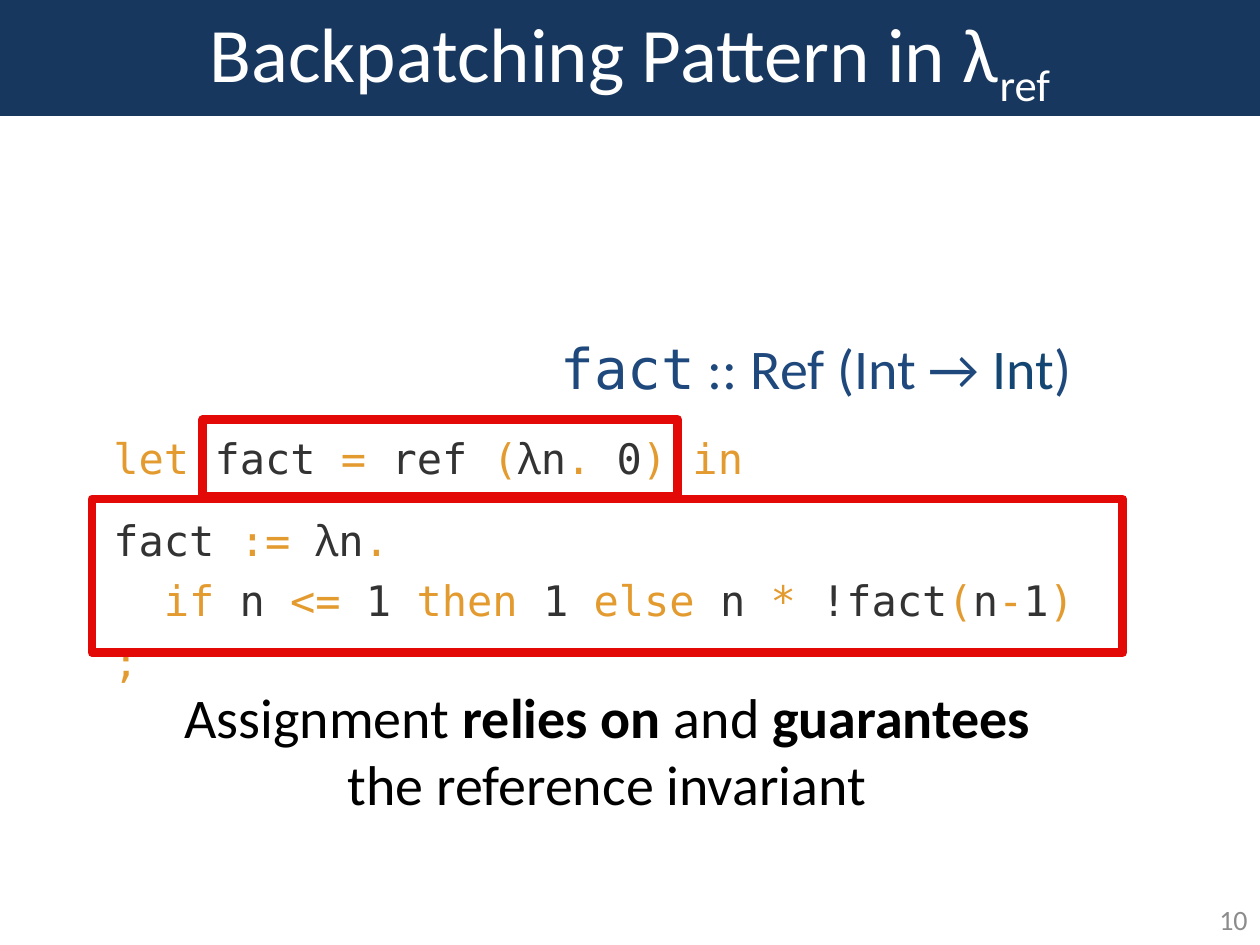
from dataclasses import dataclass, field

from lxml.etree import SubElement
from pptx import Presentation
from pptx.dml.color import RGBColor
from pptx.enum.shapes import MSO_SHAPE as Shape
from pptx.enum.text import MSO_ANCHOR as Anchor, MSO_AUTO_SIZE as AutoSize, PP_ALIGN as Align
from pptx.oxml.ns import qn
from pptx.util import Inches, Pt

# The slide is a grid of 100 columns by 75 rows.
SLIDE_WIDTH, SLIDE_HEIGHT = Inches(10), Inches(7.5)
COLUMN, ROW = SLIDE_WIDTH / 100, SLIDE_HEIGHT / 75

NAVY = RGBColor(0x17, 0x37, 0x5E)
BLUE = RGBColor(0x1F, 0x49, 0x7D)
TEAL = RGBColor(0x14, 0x46, 0x73)
RED = RGBColor(0xE3, 0x09, 0x07)
ORANGE = RGBColor(0xE3, 0x9B, 0x30)
CHARCOAL = RGBColor(0x33, 0x33, 0x33)
GRAY = RGBColor(0x8C, 0x8C, 0x8C)
BLACK = RGBColor(0, 0, 0)
WHITE = RGBColor(0xFF, 0xFF, 0xFF)

SANS, MONO, GREEK = "Calibri", "DejaVu Sans Mono", "Noto Sans"
CODE_SIZE = 24
CODE_INDENT = Pt(2 * 0.6 * CODE_SIZE)  # two monospaced characters


@dataclass
class Box:
    """A place on the grid, in columns and rows."""
    left: float
    top: float
    width: float
    height: float

    def lengths(self) -> list[int]:
        return [round(self.left * COLUMN), round(self.top * ROW),
                round(self.width * COLUMN), round(self.height * ROW)]


@dataclass
class Run:
    text: str
    color: RGBColor
    size: float
    font: str = SANS
    bold: bool = False
    baseline: int = 0


@dataclass
class Line:
    """A paragraph; each "\\n" run is a line break."""
    runs: list[Run]
    align: Align = Align.LEFT
    space_after: float = 0
    indent: int = 0


@dataclass
class TextBlock:
    box: Box
    lines: list[Line]
    frame: dict = field(default_factory=dict)


def keyword(text: str) -> Run:
    return Run(text, ORANGE, CODE_SIZE, MONO)


def plain(text: str) -> Run:
    return Run(text, CHARCOAL, CODE_SIZE, MONO)


def write_lines(text_frame, lines: list[Line]) -> None:
    for number, line in enumerate(lines):
        paragraph = text_frame.add_paragraph() if number else text_frame.paragraphs[0]
        paragraph.alignment = line.align
        paragraph.space_after = Pt(line.space_after)
        if line.indent:
            paragraph._p.get_or_add_pPr().set("marL", str(line.indent))
        for part in line.runs:
            if part.text == "\n":
                paragraph.add_line_break()
                continue
            run = paragraph.add_run()
            run.text = part.text
            formats = {"name": part.font, "size": Pt(part.size), "bold": part.bold}
            for name, value in formats.items():
                setattr(run.font, name, value)
            run.font.color.rgb = part.color
            if part.baseline:
                run._r.get_or_add_rPr().set("baseline", str(part.baseline * 1000))


def fill_frame(text_frame, block: TextBlock) -> None:
    formats = {"word_wrap": True, "vertical_anchor": Anchor.MIDDLE} | block.frame
    for name, value in formats.items():
        setattr(text_frame, name, value)
    write_lines(text_frame, block.lines)


def add_text(slide, block: TextBlock) -> None:
    fill_frame(slide.shapes.add_textbox(*block.box.lengths()).text_frame, block)


def add_title_bar(slide, block: TextBlock) -> None:
    bar = slide.shapes.add_shape(Shape.RECTANGLE, *block.box.lengths())
    bar.shadow.inherit = False
    bar.fill.solid()
    bar.fill.fore_color.rgb = NAVY
    bar.line.fill.background()
    fill_frame(bar.text_frame, block)


def add_highlight(slide, box: Box) -> None:
    """Draw a red outline with rounded corner joins."""
    outline = slide.shapes.add_shape(Shape.RECTANGLE, *box.lengths())
    outline.shadow.inherit = False
    outline.fill.background()
    outline.line.color.rgb = RED
    outline.line.width = Pt(5)
    SubElement(outline.line._get_or_add_ln(), qn("a:round"))


GROW = {"auto_size": AutoSize.SHAPE_TO_FIT_TEXT}
NO_MARGINS = dict.fromkeys(
    ("margin_left", "margin_top", "margin_right", "margin_bottom"), 0)
LAMBDA = Run("λ", CHARCOAL, CODE_SIZE, GREEK)

PAGE_NUMBER = TextBlock(Box(76.7, 71, 23.3, 4),
                        [Line([Run("10", GRAY, 16)], Align.RIGHT)])

CODE = TextBlock(Box(9, 34.3, 82.1, 20.4), [
    Line([keyword("let "), plain("fact "), keyword("="), plain(" ref "), keyword("("),
          LAMBDA, plain("n"), keyword("."), plain(" 0"), keyword(") in")],
         space_after=18),
    Line([plain("fact "), keyword(":= "), LAMBDA, plain("n"), keyword(".")],
         space_after=6),
    Line([keyword("if "), plain("n "), keyword("<="), plain(" 1 "), keyword("then "),
          plain("1"), keyword(" else "), plain("n "), keyword("* "), plain("!fact"),
          keyword("("), plain("n"), keyword("-"), plain("1"), keyword(")")],
         space_after=6, indent=CODE_INDENT),
    Line([keyword(";")], space_after=6),
], GROW | NO_MARGINS | {"vertical_anchor": Anchor.TOP})

TITLE = TextBlock(Box(0, 0, 100, 9.2), [
    Line([Run("Backpatching Pattern in λ", WHITE, 44),
          Run("ref", WHITE, 44, baseline=-25)], Align.CENTER)])

TYPE_NOTE = TextBlock(Box(40.1, 25.9, 50.3, 6.4), [
    Line([Run("fact", BLUE, 32, MONO), Run(" :: Ref (Int → ", BLUE, 32),
          Run("Int", TEAL, 32), Run(") ", BLUE, 32)], Align.CENTER, 12)], GROW)

CONCLUSION = TextBlock(Box(7.3, 53.6, 81.8, 11.8), [
    Line([Run("Assignment ", BLACK, 32), Run("relies on", BLACK, 32, bold=True),
          Run(" and ", BLACK, 32), Run("guarantees", BLACK, 32, bold=True),
          Run("\n", BLACK, 32), Run("the reference invariant", BLACK, 32)],
         Align.CENTER, 12)], GROW)

REFERENCE_HIGHLIGHT = Box(16.1, 33.3, 37.7, 6.1)
ASSIGNMENT_HIGHLIGHT = Box(7.3, 39.6, 81.8, 12.2)


def main() -> None:
    presentation = Presentation()
    presentation.slide_width, presentation.slide_height = SLIDE_WIDTH, SLIDE_HEIGHT
    slide = presentation.slides.add_slide(presentation.slide_layouts[6])
    add_text(slide, PAGE_NUMBER)
    add_text(slide, CODE)
    add_highlight(slide, REFERENCE_HIGHLIGHT)
    add_title_bar(slide, TITLE)
    add_text(slide, TYPE_NOTE)
    add_highlight(slide, ASSIGNMENT_HIGHLIGHT)
    add_text(slide, CONCLUSION)
    presentation.save("out.pptx")


if __name__ == "__main__":
    main()
